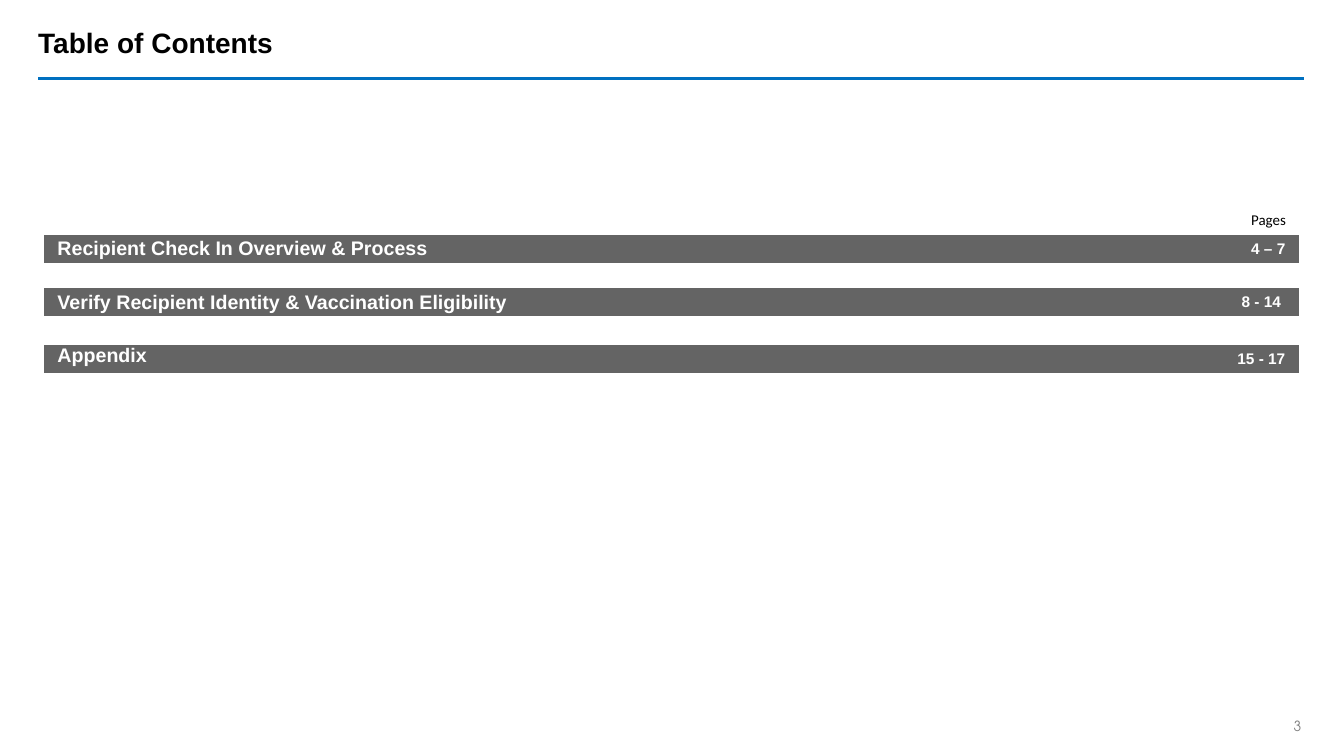
from dataclasses import dataclass
from itertools import accumulate

from lxml.etree import SubElement
from pptx import Presentation
from pptx.dml.color import RGBColor
from pptx.enum.shapes import MSO_CONNECTOR as Connector
from pptx.enum.text import MSO_ANCHOR as Anchor, PP_ALIGN as Align
from pptx.oxml.ns import qn
from pptx.util import Inches, Pt

WIDTH, HEIGHT = Inches(13.33), Inches(7.5)


@dataclass(frozen=True)
class Theme:
    black: str = "000000"
    white: str = "FFFFFF"
    bar: str = "646464"
    rule: str = "0070C0"
    muted: str = "808080"
    main_font: str = "Arial"
    label_font: str = "Calibri"
    number_font: str = "TeX Gyre Adventor"
    title_size: float = 20
    section_size: float = 14
    pages_size: float = 11
    label_size: float = 10.7
    number_size: float = 10
    gap_size: float = 8
    rule_width: float = 2.25
    no_grid_style: str = "{2D5ABB26-0587-4C30-8999-92F81FD0307C}"


@dataclass(frozen=True)
class Section:
    heading: str
    pages: str
    gap_after: float  # percent of slide height
    anchor: Anchor = Anchor.MIDDLE


@dataclass(frozen=True)
class Area:
    """Place and size in percent of the slide."""
    left: float
    top: float
    width: float
    height: float

    def box(self) -> tuple[int, int, int, int]:
        return across(self.left), down(self.top), across(self.width), down(self.height)


THEME = Theme()
BAR_HEIGHT = 3.73
COLUMNS = (75.84, 17.48)
SECTIONS = (
    Section("Recipient Check In Overview & Process", "4 – 7", 3.33),
    Section("Verify Recipient Identity & Vaccination Eligibility", "8 - 14 ", BAR_HEIGHT),
    Section("Appendix", "15 - 17", BAR_HEIGHT, Anchor.TOP),
)


def across(percent: float) -> int:
    return round(WIDTH * percent / 100)


def down(percent: float) -> int:
    return round(HEIGHT * percent / 100)


def write(frame, text: str, *, size: float, color: str, font: str = THEME.main_font,
          bold: bool = False, align: Align = Align.LEFT) -> None:
    paragraph = frame.paragraphs[0]
    paragraph.alignment = align
    run = paragraph.add_run()
    run.text = text
    run.font.name, run.font.size, run.font.bold = font, Pt(size), bold
    run.font.color.rgb = RGBColor.from_string(color)


def add_label(slide, area: Area, text: str, *, inset: tuple[float, float], **style) -> None:
    frame = slide.shapes.add_textbox(*area.box()).text_frame
    frame.word_wrap = True
    frame.vertical_anchor = Anchor.MIDDLE
    frame.margin_left = frame.margin_right = Inches(inset[0])
    frame.margin_top = frame.margin_bottom = Inches(inset[1])
    write(frame, text, **style)


def add_rule(slide, left: float, right: float, top: float) -> None:
    rule = slide.shapes.add_connector(
        Connector.STRAIGHT, across(left), down(top), across(right), down(top))
    rule.line.color.rgb = RGBColor.from_string(THEME.rule)
    rule.line.width = Pt(THEME.rule_width)
    SubElement(rule._element.spPr, qn("a:effectLst"))


def prepare_cell(cell, fill: str, anchor: Anchor = Anchor.MIDDLE) -> None:
    cell.fill.solid()
    cell.fill.fore_color.rgb = RGBColor.from_string(fill)
    cell.margin_left = cell.margin_right = Inches(0.13)
    cell.margin_top = cell.margin_bottom = 0
    cell.vertical_anchor = anchor


def add_contents(slide, left: float, top: float, sections: tuple[Section, ...]) -> None:
    heights = [h for section in sections for h in (BAR_HEIGHT, section.gap_after)]
    area = Area(left, top, sum(COLUMNS), list(accumulate(heights))[-1])
    contents = slide.shapes.add_table(len(heights), len(COLUMNS), *area.box()).table
    contents.first_row = contents.horz_banding = False
    contents._tbl.tblPr.find(qn("a:tableStyleId")).text = THEME.no_grid_style
    for column, share in zip(contents.columns, COLUMNS):
        column.width = across(share)
    for row, share in zip(contents.rows, heights):
        row.height = down(share)

    for index, section in enumerate(sections):
        # Section bar
        heading, pages = contents.rows[2 * index].cells
        prepare_cell(heading, THEME.bar, section.anchor)
        prepare_cell(pages, THEME.bar)
        write(heading.text_frame, section.heading, size=THEME.section_size,
              color=THEME.white, bold=True)
        write(pages.text_frame, section.pages, size=THEME.pages_size,
              color=THEME.white, bold=True, align=Align.RIGHT)
        # Gap below the bar, with small type so that the row keeps its height
        for gap in contents.rows[2 * index + 1].cells:
            prepare_cell(gap, THEME.white)
            end = SubElement(gap.text_frame.paragraphs[0]._p, qn("a:endParaRPr"))
            end.set("sz", str(round(THEME.gap_size * 100)))


def main() -> None:
    deck = Presentation()
    deck.slide_width, deck.slide_height = WIDTH, HEIGHT
    slide = deck.slides.add_slide(deck.slide_layouts[6])

    # Page number and header rule
    add_label(slide, Area(94.82, 94.93, 3.45, 2.27), "3", inset=(0, 0),
              size=THEME.number_size, color=THEME.muted, font=THEME.number_font,
              align=Align.CENTER)
    add_rule(slide, 2.85, 97, 10.4)

    # Contents with page ranges
    add_contents(slide, 3.3, 31.07, SECTIONS)
    add_label(slide, Area(92.12, 26.93, 4.88, 4.13), "Pages", inset=(0.13, 0.07),
              size=THEME.label_size, color=THEME.black, font=THEME.label_font)

    # Title
    add_label(slide, Area(2.1, 0.27, 94.15, 10.53), "Table of Contents", inset=(0.1, 0.05),
              size=THEME.title_size, color=THEME.black, bold=True)

    deck.save("out.pptx")


if __name__ == "__main__":
    main()
